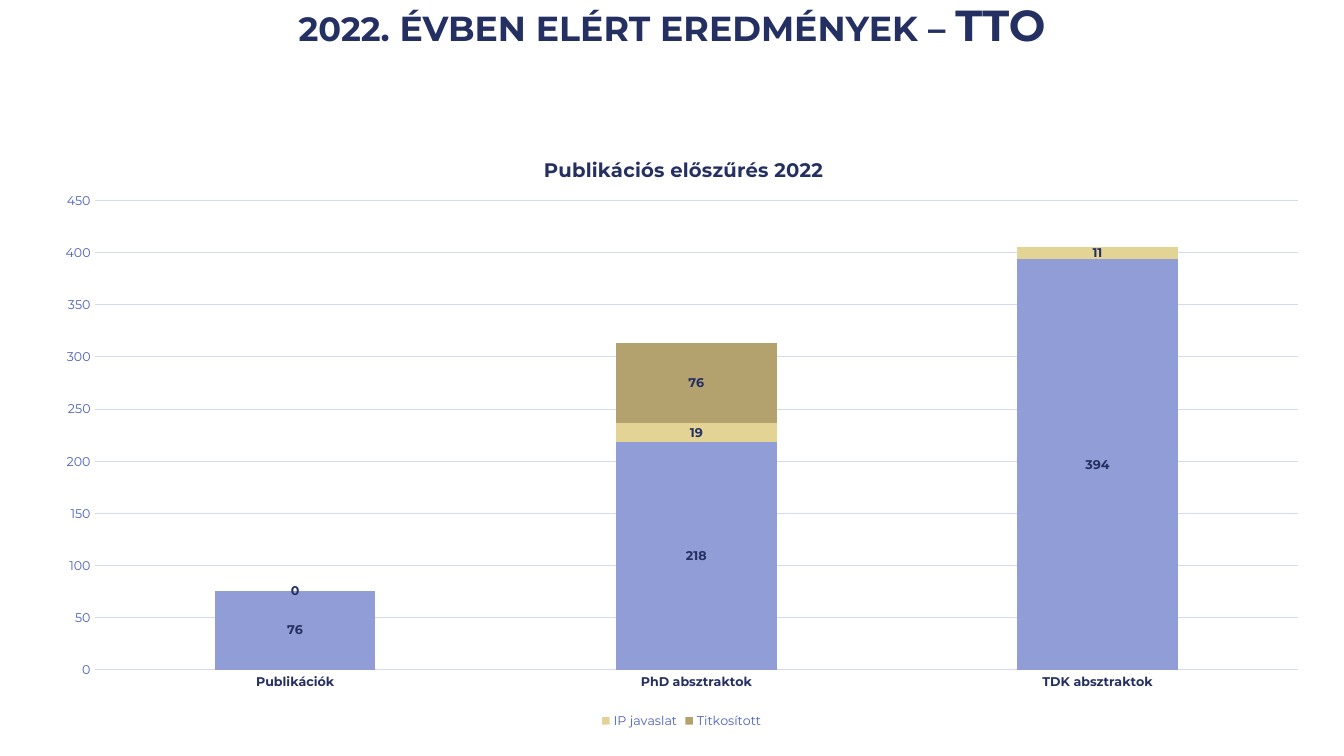
from dataclasses import dataclass

from lxml import etree
from pptx import Presentation
from pptx.chart.data import CategoryChartData
from pptx.dml.color import RGBColor
from pptx.enum.chart import XL_CHART_TYPE, XL_LEGEND_POSITION, XL_TICK_MARK
from pptx.enum.text import MSO_ANCHOR, MSO_AUTO_SIZE, PP_ALIGN
from pptx.oxml import parse_xml
from pptx.oxml.ns import nsdecls, qn
from pptx.util import Inches, Pt


@dataclass(frozen=True)
class Theme:
    font: str = "Montserrat"
    navy: str = "242F62"
    blue: str = "4C60BD"
    grid: str = "D6DAF0"
    series: tuple = ("919DD7", "E3D496", "B3A16E")
    chart_title: int = 14
    chart_text: int = 10
    label: int = 9


class SlideBuilder:
    def __init__(self, presentation, theme):
        self.theme = theme
        self.slide = presentation.slides.add_slide(presentation.slide_layouts[5])

    def style(self, font, size, color, bold=False):
        font.name = self.theme.font
        font.size = Pt(size)
        font.bold = bold
        font.color.rgb = RGBColor.from_string(color)

    def add_title(self, runs, left, top, width, height):
        title = self.slide.shapes.title
        title.left, title.top = Inches(left), Inches(top)
        title.width, title.height = Inches(width), Inches(height)
        frame = title.text_frame
        frame.word_wrap = True
        frame.auto_size = MSO_AUTO_SIZE.NONE
        frame.vertical_anchor = MSO_ANCHOR.MIDDLE
        frame.margin_top = frame.margin_bottom = 0
        paragraph = frame.paragraphs[0]
        paragraph.alignment = PP_ALIGN.CENTER
        paragraph.line_spacing = 0.9
        for text, size in runs:
            run = paragraph.add_run()
            run.text = text
            self.style(run.font, size, self.theme.navy, bold=True)
            run.font._element.set("cap", "small")

    def add_stacked_columns(self, title, categories, series, left, top, width, height):
        data = CategoryChartData()
        data.categories = categories
        for name, values in series:
            data.add_series(name, values)
        chart = self.slide.shapes.add_chart(
            XL_CHART_TYPE.COLUMN_STACKED, Inches(left), Inches(top),
            Inches(width), Inches(height), data).chart
        self.style(chart.font, self.theme.chart_text, self.theme.navy)

        # Chart title
        chart.has_title = True
        run = chart.chart_title.text_frame.paragraphs[0].add_run()
        run.text = title
        self.style(run.font, self.theme.chart_title, self.theme.navy, bold=True)
        chart.chart_title.include_in_layout = False

        # Columns
        plot = chart.plots[0]
        plot.gap_width, plot.overlap = 150, 100
        plot.vary_by_categories = False
        for column, color in zip(plot.series, self.theme.series):
            column.format.fill.solid()
            column.format.fill.fore_color.rgb = RGBColor.from_string(color)
        self.format_axes(chart)
        return chart

    def format_axes(self, chart):
        theme = self.theme
        category, value = chart.category_axis, chart.value_axis
        for axis in (category, value):
            axis.major_tick_mark = axis.minor_tick_mark = XL_TICK_MARK.NONE
        self.style(category.tick_labels.font, theme.label, theme.navy, bold=True)
        self.style(value.tick_labels.font, theme.label, theme.blue)
        value.minimum_scale, value.maximum_scale, value.major_unit = 0, 450, 50
        value.format.line.fill.background()
        for line in (category.format.line, value.major_gridlines.format.line):
            line.color.rgb = RGBColor.from_string(theme.grid)
            line.width = Pt(0.75)

    def label_series(self, series):
        labels = series.data_labels
        labels.show_value = True
        self.style(labels.font, self.theme.label, self.theme.navy, bold=True)

    def label_point(self, series, index):
        label = series.points[index].data_label
        self.style(label.font, self.theme.label, self.theme.navy, bold=True)
        series.data_labels.show_value = False

    def add_legend(self, chart, hidden):
        chart.has_legend = True
        legend = chart.legend
        legend.position = XL_LEGEND_POSITION.BOTTOM
        legend.include_in_layout = False
        self.style(legend.font, self.theme.label, self.theme.blue)
        entry = parse_xml(
            f'<c:legendEntry {nsdecls("c")}><c:idx val="{hidden}"/>'
            '<c:delete val="1"/></c:legendEntry>')
        legend._element.find(qn("c:legendPos")).addnext(entry)

    def place(self, element, before, inner=False, **fractions):
        """Give a chart part a manual position, in fractions of the chart."""
        for old in element.findall(qn("c:layout")):
            element.remove(old)
        layout = etree.Element(qn("c:layout"))
        manual = etree.SubElement(layout, qn("c:manualLayout"))
        if inner:
            etree.SubElement(manual, qn("c:layoutTarget")).set("val", "inner")
        for key in ("x", "y"):
            etree.SubElement(manual, qn(f"c:{key}Mode")).set("val", "edge")
        for key, fraction in fractions.items():
            etree.SubElement(manual, qn(f"c:{key}")).set("val", str(fraction))
        element.find(qn(before)).addprevious(layout)


def main():
    presentation = Presentation()
    presentation.slide_width = Inches(13.33)
    presentation.slide_height = Inches(7.5)
    builder = SlideBuilder(presentation, Theme())

    # Slide title
    builder.add_title([("2022", 30), (". évben elért eredmények – TTO", 31)],
                      0, 0, 13.33, 0.54)

    # Publication screening chart
    chart = builder.add_stacked_columns(
        "Publikációs előszűrés 2022",
        ["Publikációk", "PhD absztraktok", "TDK absztraktok"],
        [("Series 1", (76, 218, 394)),
         ("IP javaslat", (0, 19, 11)),
         ("Titkosított", (0, 76, None))],
        0.39, 1.27, 12.74, 6)
    screened, proposals, classified = chart.plots[0].series
    builder.label_series(screened)
    builder.label_series(proposals)
    builder.label_point(classified, 1)
    builder.add_legend(chart, hidden=0)

    # Positions inside the chart
    builder.place(chart.chart_title._element, "c:overlay", x=0.39, y=0.04)
    plot_area = chart._chartSpace.chart.plotArea
    builder.place(plot_area, "c:barChart", inner=True, x=0.043, y=0.12, w=0.937, h=0.776)

    presentation.save("out.pptx")


if __name__ == "__main__":
    main()
